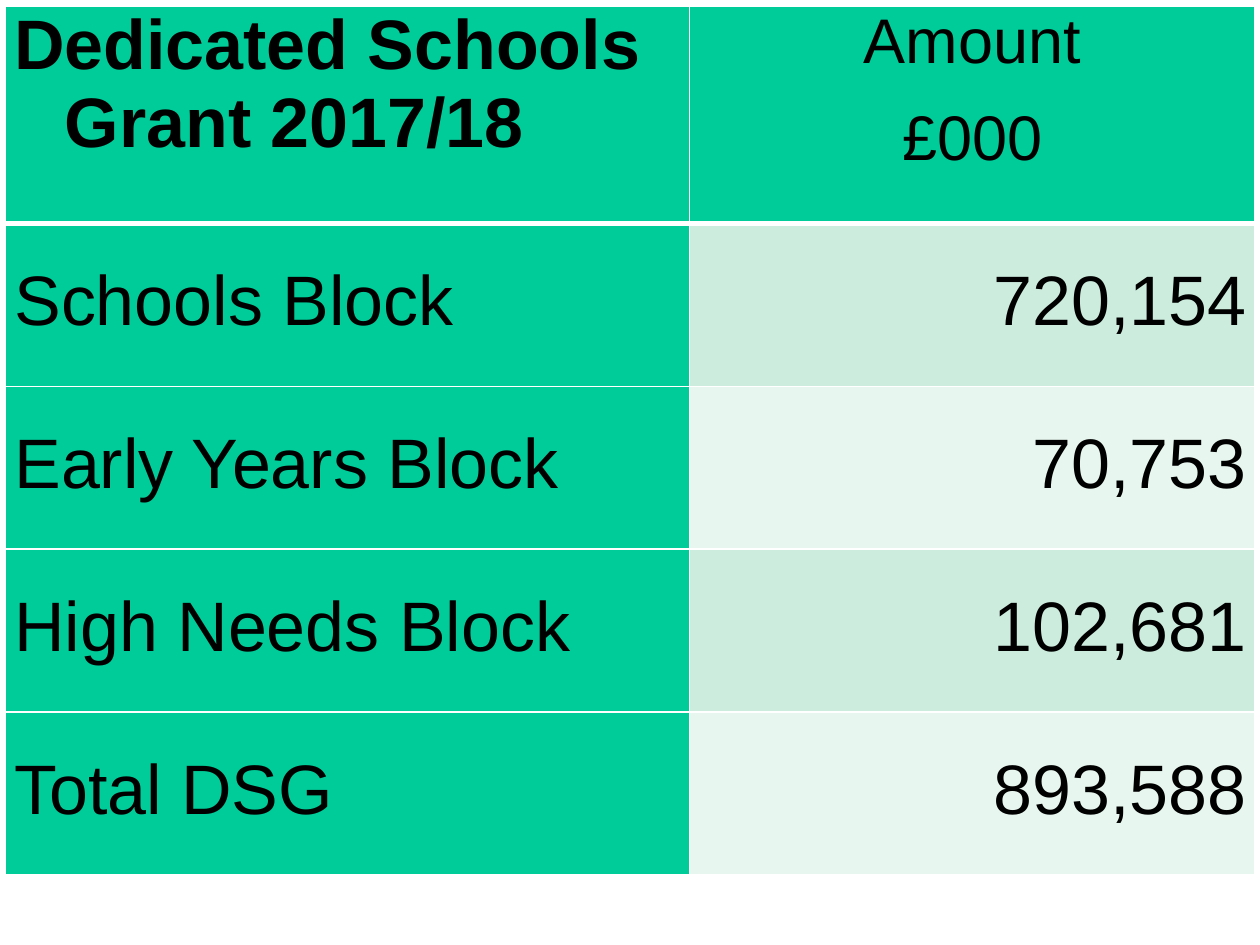
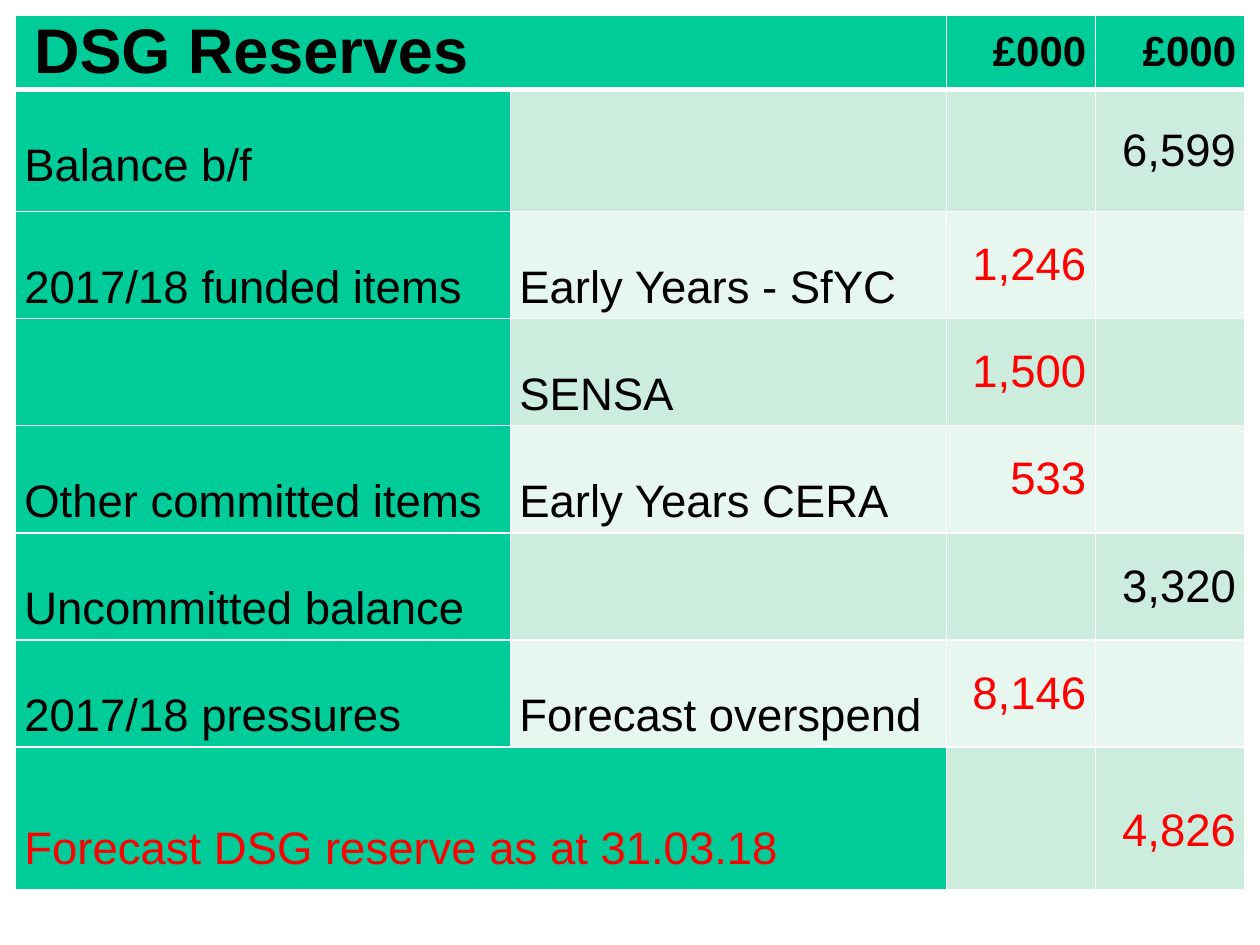
"""Build two slides of tables on the Dedicated Schools Grant and its reserves."""
import lxml.etree
import pptx
import pptx.dml.color
import pptx.enum.text
import pptx.oxml.ns
import pptx.util

Cm = pptx.util.Cm
Pt = pptx.util.Pt
ALIGN = pptx.enum.text.PP_ALIGN
ANCHOR = pptx.enum.text.MSO_ANCHOR

GREEN = pptx.dml.color.RGBColor(0x00, 0xCC, 0x99)
MINT = pptx.dml.color.RGBColor(0xCC, 0xEC, 0xDE)
PALE = pptx.dml.color.RGBColor(0xE7, 0xF6, 0xEF)
BLACK = pptx.dml.color.RGBColor(0x00, 0x00, 0x00)
RED = pptx.dml.color.RGBColor(0xFF, 0x00, 0x00)
WHITE = pptx.dml.color.RGBColor(0xFF, 0xFF, 0xFF)
FONT = "Arial"


def add_grid(slide, left, top, widths, heights):
    """Add a table with green header row and first column, banded body and white rules."""
    frame = slide.shapes.add_table(len(heights), len(widths), Cm(left), Cm(top),
                                   Cm(sum(widths)), Cm(sum(heights)))
    table = frame.table
    for column, width in zip(table.columns, widths):
        column.width = Cm(width)
    for row_index, height in enumerate(heights):
        table.rows[row_index].height = Cm(height)
        for column_index in range(len(widths)):
            cell = table.cell(row_index, column_index)
            cell.margin_left = cell.margin_right = Cm(0.18)
            cell.margin_top = cell.margin_bottom = 0
            properties = cell._tc.get_or_add_tcPr()
            for side in ("lnL", "lnR", "lnT", "lnB"):
                thick = (row_index, side) in ((0, "lnB"), (1, "lnT"))
                line = lxml.etree.SubElement(properties, pptx.oxml.ns.qn(f"a:{side}"),
                                             w=str(Pt(3 if thick else 1)))
                solid = lxml.etree.SubElement(line, pptx.oxml.ns.qn("a:solidFill"))
                lxml.etree.SubElement(solid, pptx.oxml.ns.qn("a:srgbClr"), val=str(WHITE))
            cell.fill.solid()
            if row_index == 0 or column_index == 0:
                cell.fill.fore_color.rgb = GREEN
            else:
                cell.fill.fore_color.rgb = MINT if row_index % 2 else PALE
    return table


def write_cell(cell, lines, align=ALIGN.LEFT, spacing=1.0, bold=False, color=BLACK):
    """Write paragraphs, each a list of (text, size) runs, with a hanging indent."""
    for index, runs in enumerate(lines):
        text_frame = cell.text_frame
        paragraph = text_frame.add_paragraph() if index else text_frame.paragraphs[0]
        indents = paragraph._p.get_or_add_pPr()
        indents.set("marL", str(Cm(1.02)))
        indents.set("indent", str(Cm(-1.02)))
        paragraph.alignment = align
        paragraph.line_spacing = spacing
        paragraph.space_before = Pt(3 if index else 0)
        paragraph.space_after = Pt(12)
        for text, size in runs:
            run = paragraph.add_run()
            run.text = text
            run.font.name = FONT
            run.font.size = Pt(size)
            run.font.bold = bold
            run.font.color.rgb = color


presentation = pptx.Presentation()
presentation.slide_width = Cm(25.4)
presentation.slide_height = Cm(19.05)
blank_layout = presentation.slide_layouts[6]

grant_slide = presentation.slides.add_slide(blank_layout)
grant_table = add_grid(grant_slide, 0.11, 0.13, [13.79, 11.4], [4.38] + [3.28] * 4)
write_cell(grant_table.cell(0, 0), [[("Dedicated Schools Grant 2017/18", 40)]], bold=True)
write_cell(grant_table.cell(0, 1), [[("Amount", 36)], [("£000", 36)]], ALIGN.CENTER)
grant_blocks = [
    ("Schools Block", "720,154"),
    ("Early Years Block", "70,753"),
    ("High Needs Block", "102,681"),
    ("Total DSG", "893,588"),
]
for row_index, (block, amount) in enumerate(grant_blocks, start=1):
    write_cell(grant_table.cell(row_index, 0), [[(block, 40)]], spacing=1.5)
    write_cell(grant_table.cell(row_index, 1), [[(amount, 40)]], ALIGN.RIGHT, 1.5)

reserves_slide = presentation.slides.add_slide(blank_layout)
reserves_table = add_grid(reserves_slide, 0.31, 0.3, [9.98, 8.79, 3.0, 3.02],
                          [1.5, 2.46] + [2.16] * 5 + [2.88])
for row_index in (0, 7):
    reserves_table.cell(row_index, 0).merge(reserves_table.cell(row_index, 1))
write_cell(reserves_table.cell(0, 0), [[(" ", 20), ("DSG Reserves", 36)]], bold=True)
for column_index in (2, 3):
    write_cell(reserves_table.cell(0, column_index), [[("£000", 24)]], ALIGN.RIGHT, bold=True)
for column_index in (0, 2, 3):
    reserves_table.cell(0, column_index).vertical_anchor = ANCHOR.MIDDLE

reserve_items = [
    ("Balance b/f", "", "", "6,599"),
    ("2017/18 funded items", "Early Years - SfYC", "1,246", ""),
    ("", "SENSA", "1,500", ""),
    ("Other committed items", "Early Years CERA", "533", ""),
    ("Uncommitted balance", "", "", "3,320"),
    ("2017/18 pressures", "Forecast overspend", "8,146", ""),
    ("Forecast DSG reserve as at 31.03.18", "", "", "4,826"),
]
for row_index, item in enumerate(reserve_items, start=1):
    is_forecast = row_index == len(reserve_items)
    for column_index, text in enumerate(item):
        if not text:
            continue
        cell = reserves_table.cell(row_index, column_index)
        color = RED if is_forecast or column_index == 2 else BLACK
        if column_index < 2:
            write_cell(cell, [[(text, 26)]], spacing=2.5 if is_forecast else 2.0, color=color)
        else:
            cell.vertical_anchor = ANCHOR.MIDDLE
            write_cell(cell, [[(text, 26)]], ALIGN.RIGHT, 1.5 if is_forecast else 1.0,
                       color=color)

presentation.save("out.pptx")
